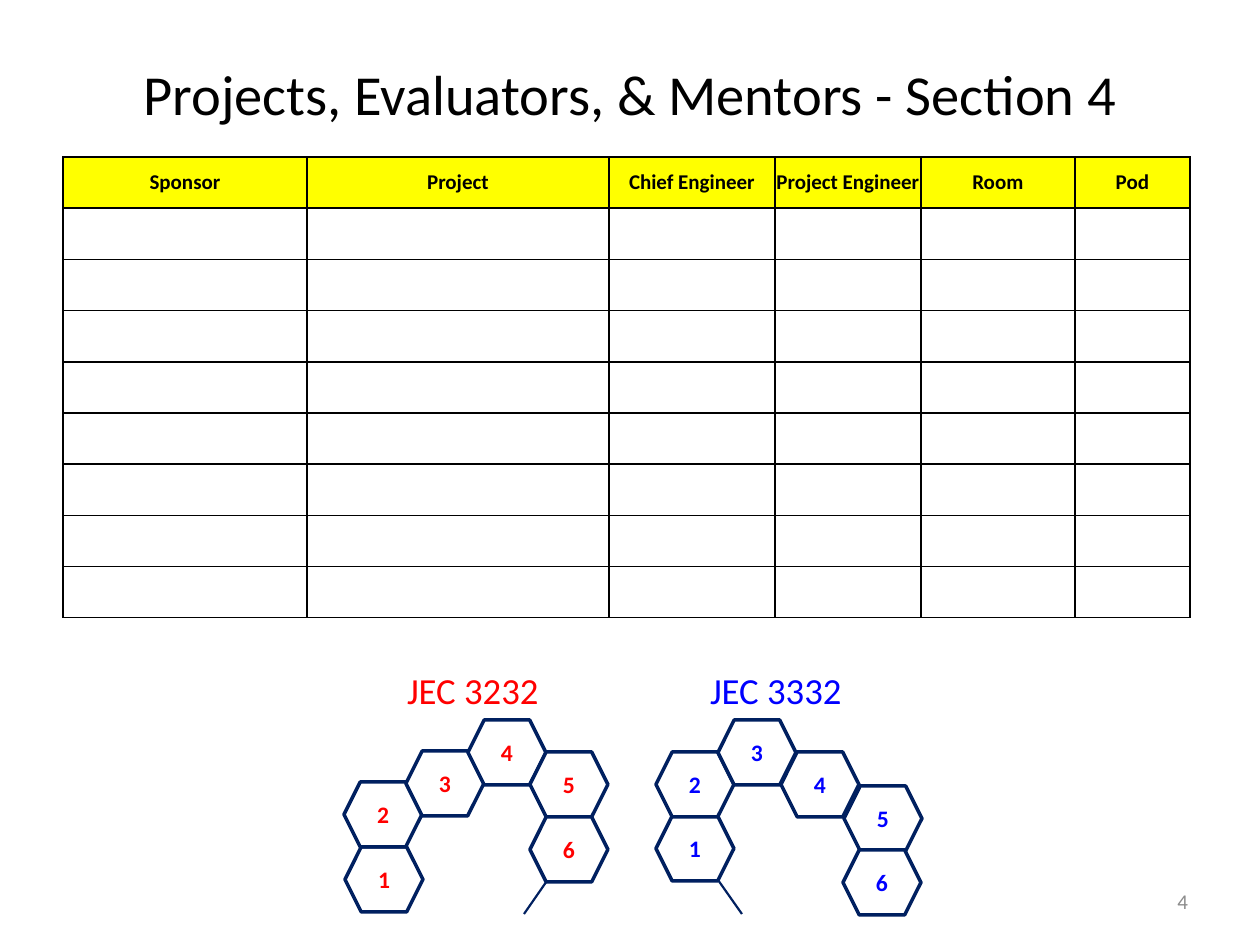
import pptx
import pptx.dml.color
import pptx.enum.shapes
import pptx.enum.text
import pptx.oxml
import pptx.oxml.ns
import pptx.util

PX_PER_INCH = 126
COLORS = {
    "text": "000000", "muted": "8C8C8C", "paper": "FFFFFF", "header": "FFFF00",
    "outline": "002060", "red": "FF0000", "blue": "0000FF",
}
ALIGN = pptx.enum.text.PP_ALIGN
MIDDLE = pptx.enum.text.MSO_ANCHOR.MIDDLE
SHAPE = pptx.enum.shapes.MSO_SHAPE

HEADINGS = {"Sponsor": 244, "Project": 302, "Chief Engineer": 166,
            "Project Engineer": 146, "Room": 154, "Pod": 115}
EMPTY_ROWS = 8
POD_WIDTH, POD_HEIGHT = 78, 65

# Offsets are measured from the top left corner of each room's box.
ROOMS = [
    {"name": "JEC 3332", "color": "blue", "box": (656, 658), "label": (48, 0),
     "door": (17, 158, 86, 256),
     "pods": [(0, 158), (0, 94), (62, 62), (125, 94), (188, 128), (187, 192)]},
    {"name": "JEC 3232", "color": "red", "box": (344, 658), "label": (57, 0),
     "door": (248, 158, 180, 256),
     "pods": [(1, 189), (0, 124), (62, 93), (124, 62), (186, 94), (186, 159)]},
]


def px(length):
    return pptx.util.Emu(round(length * 914400 / PX_PER_INCH))


def rgb(name):
    return pptx.dml.color.RGBColor.from_string(COLORS[name])


def write(frame, text, size, color="text", align=ALIGN.CENTER, bold=False):
    para = frame.paragraphs[0]
    para.alignment = align
    span = para.add_run()
    span.text = text
    formats = {"name": "Calibri", "size": pptx.util.Pt(size), "bold": bold}
    for key, value in formats.items():
        setattr(span.font, key, value)
    span.font.color.rgb = rgb(color)


def set_frame(frame, margin, wrap=True, anchor=MIDDLE):
    formats = {"word_wrap": wrap, "vertical_anchor": anchor}
    for side in ("left", "right", "top", "bottom"):
        formats[f"margin_{side}"] = px(margin)
    for key, value in formats.items():
        setattr(frame, key, value)


def add_text(page, box, text, size, color, align):
    frame = page.shapes.add_textbox(*map(px, box)).text_frame
    set_frame(frame, 9)
    write(frame, text, size, color, align)


def border_cell(cell):
    properties = cell._tc.get_or_add_tcPr()
    for index, side in enumerate(("lnL", "lnR", "lnT", "lnB")):
        edge = pptx.oxml.parse_xml(
            f'<a:{side} {pptx.oxml.ns.nsdecls("a")} w="12700"><a:solidFill>'
            f'<a:srgbClr val="{COLORS["text"]}"/></a:solidFill></a:{side}>')
        properties.insert(index, edge)


def add_schedule(page, left, top, height):
    table = page.shapes.add_table(
        EMPTY_ROWS + 1, len(HEADINGS), px(left), px(top),
        px(sum(HEADINGS.values())), px(height)).table
    for column, width in zip(table.columns, HEADINGS.values()):
        column.width = px(width)
    for cell in table.iter_cells():
        for side in ("left", "right", "top", "bottom"):
            setattr(cell, f"margin_{side}", px(1))
        cell.vertical_anchor = MIDDLE
        cell.fill.solid()
        cell.fill.fore_color.rgb = rgb("paper")
        border_cell(cell)
    for cell, heading in zip(table.rows[0].cells, HEADINGS):
        cell.fill.fore_color.rgb = rgb("header")
        write(cell.text_frame, heading, 12, bold=True)


def add_filled(group, kind, left, top, width, height):
    shape = group.shapes.add_shape(kind, *map(px, (left, top, width, height)))
    shape.shadow.inherit = False
    shape.fill.solid()
    shape.fill.fore_color.rgb = rgb("paper")
    return shape


def set_line(shape, width):
    shape.line.color.rgb = rgb("outline")
    shape.line.width = pptx.util.Pt(width)


def add_room(page, room):
    """Draw a room's label, door and ring of numbered pods as one group."""
    left, top = room["box"]
    group = page.shapes.add_group_shape()

    x1, y1, x2, y2 = room["door"]
    door = group.shapes.add_connector(
        pptx.enum.shapes.MSO_CONNECTOR.STRAIGHT,
        px(left + x1), px(top + y1), px(left + x2), px(top + y2))
    set_line(door, 1.25)
    door._element.spPr.append(pptx.oxml.parse_xml(
        f'<a:effectLst {pptx.oxml.ns.nsdecls("a")}/>'))

    x, y = room["label"]
    label = add_filled(group, SHAPE.RECTANGLE, left + x, top + y, 159, 63)
    label.line.fill.background()
    set_frame(label.text_frame, 6, wrap=False)
    write(label.text_frame, room["name"], 21, room["color"], ALIGN.LEFT)

    for number, (x, y) in enumerate(room["pods"], start=1):
        pod = add_filled(group, SHAPE.HEXAGON, left + x, top + y,
                         POD_WIDTH, POD_HEIGHT)
        set_line(pod, 2)
        set_frame(pod.text_frame, 0)
        write(pod.text_frame, str(number), 13.5, room["color"], bold=True)


def main():
    deck = pptx.Presentation()
    deck.slide_width, deck.slide_height = px(1260), px(945)
    page = deck.slides.add_slide(deck.slide_layouts[6])
    add_text(page, (63, 38, 1134, 110),
             "Projects, Evaluators, & Mentors - Section 4", 32.3, "text", ALIGN.CENTER)
    add_schedule(page, 63, 157, 461)
    add_text(page, (903, 876, 294, 50), "4", 12, "muted", ALIGN.RIGHT)
    for room in ROOMS:
        add_room(page, room)
    deck.save("out.pptx")


if __name__ == "__main__":
    main()
